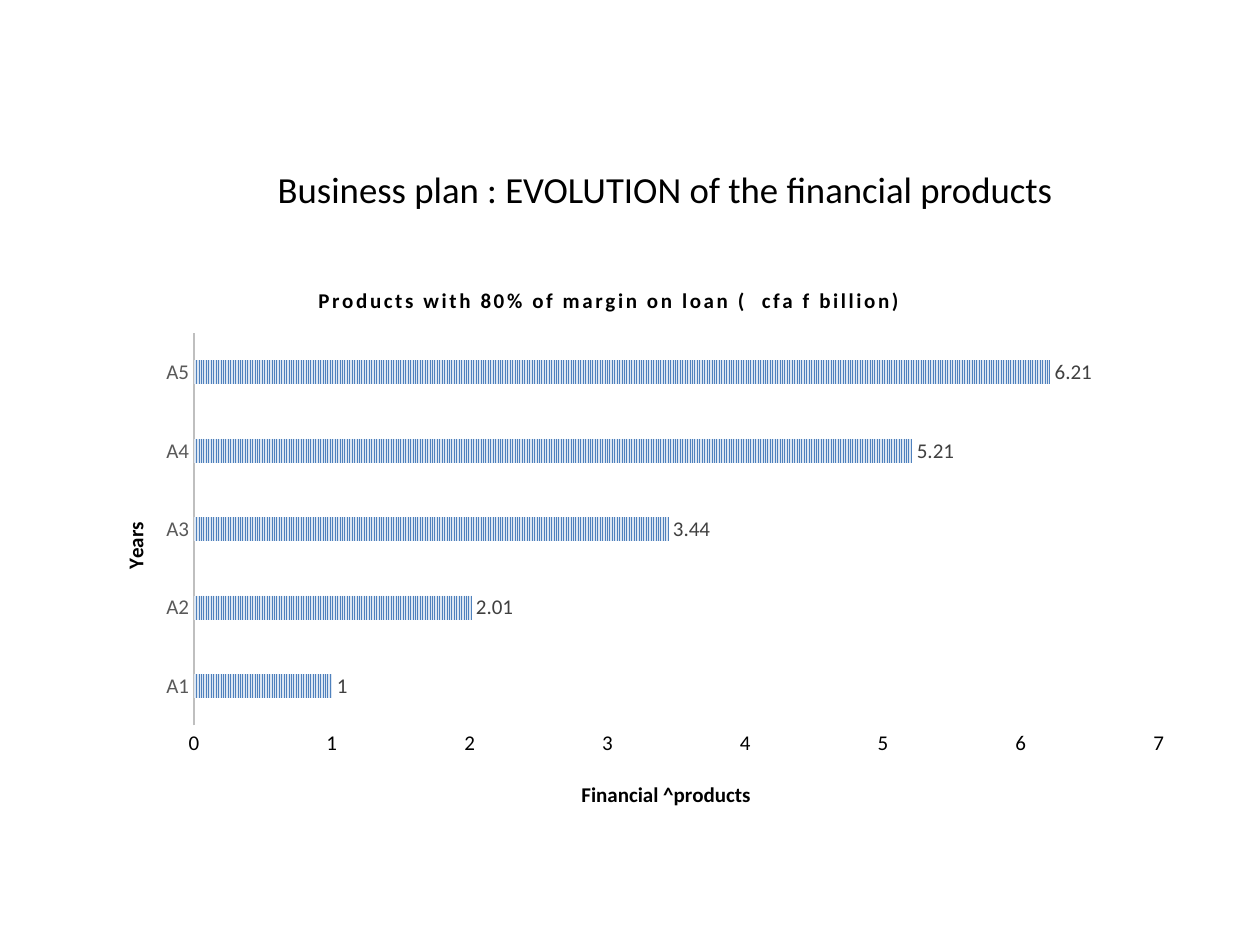
from dataclasses import dataclass

from lxml.etree import SubElement
from pptx import Presentation
from pptx.chart.data import CategoryChartData
from pptx.dml.color import RGBColor
from pptx.enum.chart import XL_CHART_TYPE, XL_LABEL_POSITION, XL_TICK_MARK
from pptx.enum.dml import MSO_PATTERN
from pptx.enum.text import MSO_ANCHOR, PP_ALIGN
from pptx.oxml.ns import qn
from pptx.util import Inches, Pt


@dataclass(frozen=True)
class Theme:
    """Typeface, type sizes and colours of the slide."""
    typeface: str = "Calibri"
    title_size: int = 21
    chart_size: int = 12
    text: str = "000000"
    category: str = "595959"
    label: str = "404040"
    axis: str = "BFBFBF"
    bar: str = "4F81BD"
    bar_back: str = "DCE6F2"


THEME = Theme()
YEARS = ("A1", "A2", "A3", "A4", "A5")
PRODUCTS = (1, 2.01, 3.44, 5.21, 6.21)


def style_font(font, size, color, bold=False):
    """Apply the theme typeface with a size, colour and weight."""
    font.name = THEME.typeface
    font.size = Pt(size)
    font.bold = bold
    font.color.rgb = RGBColor.from_string(color)


def set_layout(element, index, fractions, inner=False):
    """Place a chart part by fractions of the chart area."""
    for previous in element.findall(qn("c:layout")):
        element.remove(previous)
    layout = SubElement(element, qn("c:layout"))
    element.insert(index, layout)
    manual = SubElement(layout, qn("c:manualLayout"))
    settings = [("layoutTarget", "inner")] if inner else []
    settings += [("xMode", "edge"), ("yMode", "edge")]
    settings += zip("xywh", fractions)
    for name, value in settings:
        SubElement(manual, qn(f"c:{name}")).set("val", str(value))


def write_chart_title(title, text, left, top, spacing=0):
    """Write a bold title at a fixed place in the chart."""
    title.text_frame.text = text
    font = title.text_frame.paragraphs[0].font
    style_font(font, THEME.chart_size, THEME.text, bold=True)
    properties = title.text_frame.paragraphs[0]._p.pPr.find(qn("a:defRPr"))
    properties.set("spc", str(spacing))
    set_layout(title._element, 1, (left, top))


def format_axis(axis, color, title, left, top):
    """Give an axis its title and labels, without ticks or gridlines."""
    axis.has_major_gridlines = False
    axis.major_tick_mark = axis.minor_tick_mark = XL_TICK_MARK.NONE
    style_font(axis.tick_labels.font, THEME.chart_size, color)
    write_chart_title(axis.axis_title, title, left, top)


def add_title(slide, left, top, width, height):
    """Place and format the slide title in its box."""
    title = slide.shapes.title
    title.left, title.top, title.width, title.height = left, top, width, height
    frame = title.text_frame
    frame.text = "Business plan : EVOLUTION of the financial products"
    frame.vertical_anchor = MSO_ANCHOR.MIDDLE
    frame.paragraphs[0].alignment = PP_ALIGN.CENTER
    style_font(frame.paragraphs[0].font, THEME.title_size, THEME.text)


def add_products_chart(slide, left, top, width, height):
    """Draw the bar chart of products per year in its box."""
    data = CategoryChartData()
    data.categories = YEARS
    data.add_series("Series 1", PRODUCTS)
    chart = slide.shapes.add_chart(
        XL_CHART_TYPE.BAR_CLUSTERED, left, top, width, height, data).chart
    style_font(chart.font, THEME.chart_size, THEME.text)
    chart.has_legend = False
    write_chart_title(chart.chart_title,
                      "Products with 80% of margin on loan (  cfa f billion)",
                      0.21, 0.03, spacing=150)

    format_axis(chart.category_axis, THEME.category, "Years", 0.03, 0.45)
    axis_line = chart.category_axis.format.line
    axis_line.color.rgb = RGBColor.from_string(THEME.axis)
    axis_line.width = Pt(1.5)
    value_axis = chart.value_axis
    format_axis(value_axis, THEME.text, "Financial ^products", 0.45, 0.91)
    value_axis.format.line.fill.background()
    value_axis.minimum_scale, value_axis.maximum_scale = 0, 7
    value_axis.major_unit = 1

    plot = chart.plots[0]
    plot.gap_width, plot.overlap = 227, -48
    plot.vary_by_categories = False
    set_layout(chart._chartSpace.chart.plotArea, 0,
               (0.1, 0.12, 0.88, 0.7), inner=True)
    series = plot.series[0]
    fill = series.format.fill
    fill.patterned()
    fill.pattern = MSO_PATTERN.NARROW_VERTICAL
    fill.fore_color.rgb = RGBColor.from_string(THEME.bar)
    fill.back_color.rgb = RGBColor.from_string(THEME.bar_back)
    series.format.line.fill.background()
    labels = series.data_labels
    labels.show_value = True
    labels.position = XL_LABEL_POSITION.OUTSIDE_END
    style_font(labels.font, THEME.chart_size, THEME.label)


def main():
    """Build the slide and save the presentation."""
    presentation = Presentation()
    presentation.slide_width = Inches(10)
    presentation.slide_height = Inches(7.5)
    slide = presentation.slides.add_slide(presentation.slide_layouts[5])
    add_title(slide, Inches(1.03), Inches(1.26), Inches(8.5), Inches(0.48))
    add_products_chart(slide, Inches(0.67), Inches(2.11), Inches(8.7), Inches(4.45))
    presentation.save("out.pptx")


if __name__ == "__main__":
    main()
